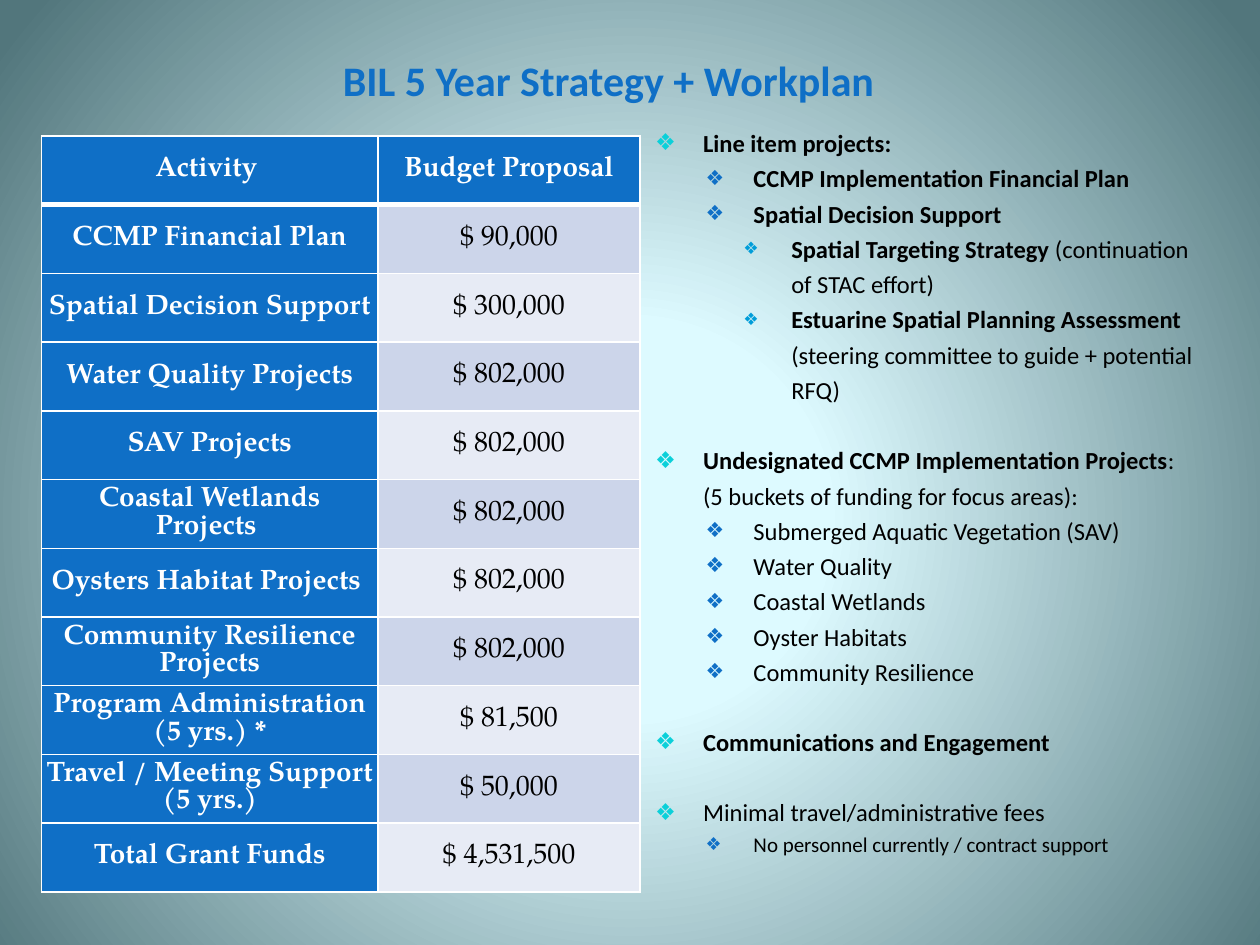
from pptx import Presentation
from pptx.dml.color import RGBColor
from pptx.enum.text import MSO_ANCHOR, MSO_AUTO_SIZE, PP_ALIGN
from pptx.oxml import parse_xml
from pptx.oxml.ns import nsdecls
from pptx.util import Inches, Pt

HUES = {
    "blue": "0F6FC6", "aqua": "0BD0D9", "sky": "009DD9",
    "black": "000000", "white": "FFFFFF",
    "band": "CCD5EA", "pale": "E7EBF5",
    "glow": "DEFBFF", "mist": "DDFAFF", "edge": "52767C",
}
BODY = "Calibri"
SERIF = "TeX Gyre Pagella"

# Per level: left margin in inches, bullet colour, bullet size in percent
LEVELS = [(0.9, "aqua", 95), (1.3, "blue", 85), (1.6, "sky", 70)]
HANG = 0.38

BUDGET = [
    ("Activity ", "Budget Proposal"),
    ("CCMP Financial Plan", "$ 90,000"),
    ("Spatial Decision Support ", "$ 300,000"),
    ("Water Quality Projects", "$ 802,000"),
    ("SAV Projects", "$ 802,000"),
    ("Coastal Wetlands Projects ", "$ 802,000"),
    ("Oysters Habitat Projects ", "$ 802,000"),
    ("Community Resilience Projects", "$ 802,000"),
    ("Program Administration (5 yrs.) *", "$ 81,500"),
    ("Travel / Meeting Support (5 yrs.)", "$ 50,000"),
    ("Total Grant Funds", "$ 4,531,500"),
]

# Level, bold text, plain text, size, space before
POINTS = [
    (0, "Line item projects:", "", 14, 0),
    (1, "CCMP Implementation Financial Plan", "", 14, 0),
    (1, "Spatial Decision Support", "", 14, 0),
    (2, "Spatial Targeting Strategy ", "(continuation of STAC effort)", 14, 0),
    (2, "Estuarine Spatial Planning Assessment ",
     "(steering committee to guide + potential RFQ)", 14, 0),
    (0, "Undesignated CCMP Implementation Projects",
     ": (5 buckets of funding for focus areas):", 14, 20),
    (1, "", "Submerged Aquatic Vegetation (SAV)", 14, 0),
    (1, "", "Water Quality", 14, 0),
    (1, "", "Coastal Wetlands", 14, 0),
    (1, "", "Oyster Habitats", 14, 0),
    (1, "", "Community Resilience", 14, 0),
    (0, "Communications and Engagement", "", 14, 20),
    (0, "", "Minimal travel/administrative fees", 14, 20),
    (1, "", "No personnel currently / contract support", 12, 0),
]


def write(para, text, size=14, font=BODY, hue="black", bold=False):
    run = para.add_run()
    run.text = text
    run.font.size = Pt(size)
    run.font.name = font
    run.font.bold = bold
    run.font.color.rgb = RGBColor.from_string(HUES[hue])


def place(shape, left, top, width, height):
    shape.left, shape.top = Inches(left), Inches(top)
    shape.width, shape.height = Inches(width), Inches(height)


def paint(slide):
    """Give the slide its radial background."""
    stops = "".join(
        f'<a:gs pos="{pos * 1000}"><a:srgbClr val="{HUES[hue]}"/></a:gs>'
        for pos, hue in ((0, "glow"), (25, "mist"), (100, "edge")))
    slide.element.cSld.insert(0, parse_xml(
        f'<p:bg {nsdecls("p", "a")}><p:bgPr><a:gradFill rotWithShape="1">'
        f'<a:gsLst>{stops}</a:gsLst><a:path path="circle">'
        '<a:fillToRect l="10000" t="110000" r="10000" b="100000"/></a:path>'
        '</a:gradFill><a:effectLst/></p:bgPr></p:bg>'))


def add_title(slide):
    title = slide.shapes.title
    place(title, 0.33, 0.08, 9, 1.25)
    frame = title.text_frame
    frame.auto_size = MSO_AUTO_SIZE.NONE
    frame.vertical_anchor = MSO_ANCHOR.BOTTOM
    frame.margin_left = frame.margin_right = 0
    frame.margin_bottom = Inches(0.5)
    para = frame.paragraphs[0]
    para.alignment = PP_ALIGN.CENTER
    write(para, "BIL 5 Year Strategy + Workplan", size=24, hue="blue", bold=True)


def add_bullet(para, level):
    left, hue, size = LEVELS[level]
    para.level = level
    props = para._p.get_or_add_pPr()
    props.set("marL", str(Inches(left)))
    props.set("indent", str(-Inches(HANG)))
    for tag in (f'<a:buClr {nsdecls("a")}><a:srgbClr val="{HUES[hue]}"/></a:buClr>',
                f'<a:buSzPct {nsdecls("a")} val="{size * 1000}"/>',
                f'<a:buChar {nsdecls("a")} char="❖"/>'):
        props.append(parse_xml(tag))


def add_list(slide):
    body = slide.placeholders[1]
    place(body, 4.58, 0.92, 5.01, 4.85)
    frame = body.text_frame
    frame.auto_size = MSO_AUTO_SIZE.NONE
    for i, (level, strong, plain, size, gap) in enumerate(POINTS):
        para = frame.add_paragraph() if i else frame.paragraphs[0]
        add_bullet(para, level)
        para.line_spacing = 1.2
        para.space_before = Pt(gap)
        for text, bold in ((strong, True), (plain, False)):
            if text:
                write(para, text, size=size, bold=bold)


def add_borders(cell, top, bottom):
    props = cell._tc.get_or_add_tcPr()
    sides = (("L", 1), ("R", 1), ("T", top), ("B", bottom))
    for i, (side, width) in enumerate(sides):
        props.insert(i, parse_xml(
            f'<a:ln{side} {nsdecls("a")} w="{Pt(width)}"><a:solidFill>'
            f'<a:srgbClr val="{HUES["white"]}"/></a:solidFill></a:ln{side}>'))


def fill_cell(cell, text, fill, hue, bold):
    cell.fill.solid()
    cell.fill.fore_color.rgb = RGBColor.from_string(HUES[fill])
    cell.vertical_anchor = MSO_ANCHOR.MIDDLE
    cell.margin_left = cell.margin_right = Inches(0.04)
    cell.margin_top = cell.margin_bottom = 0
    para = cell.text_frame.paragraphs[0]
    para.alignment = PP_ALIGN.CENTER
    write(para, text, size=16, font=SERIF, hue=hue, bold=bold)


def add_budget(slide):
    rows = len(BUDGET)
    table = slide.shapes.add_table(
        rows, 2, Inches(0.33), Inches(1.08), Inches(4.75), Inches(6)).table
    for col, width in zip(table.columns, (2.67, 2.08)):
        col.width = Inches(width)
    for r, line in enumerate(BUDGET):
        for c, text in enumerate(line):
            cell = table.cell(r, c)
            if r == 0 or c == 0:
                fill_cell(cell, text, "blue", "white", True)
            else:
                fill_cell(cell, text, "band" if r % 2 else "pale", "black", False)
            add_borders(cell, 3 if r == 1 else 1, 3 if r == 0 else 1)


def main():
    deck = Presentation()
    deck.slide_width, deck.slide_height = Inches(10), Inches(7.5)
    slide = deck.slides.add_slide(deck.slide_layouts[1])
    paint(slide)
    add_title(slide)
    add_list(slide)
    add_budget(slide)
    deck.save("out.pptx")


if __name__ == "__main__":
    main()
